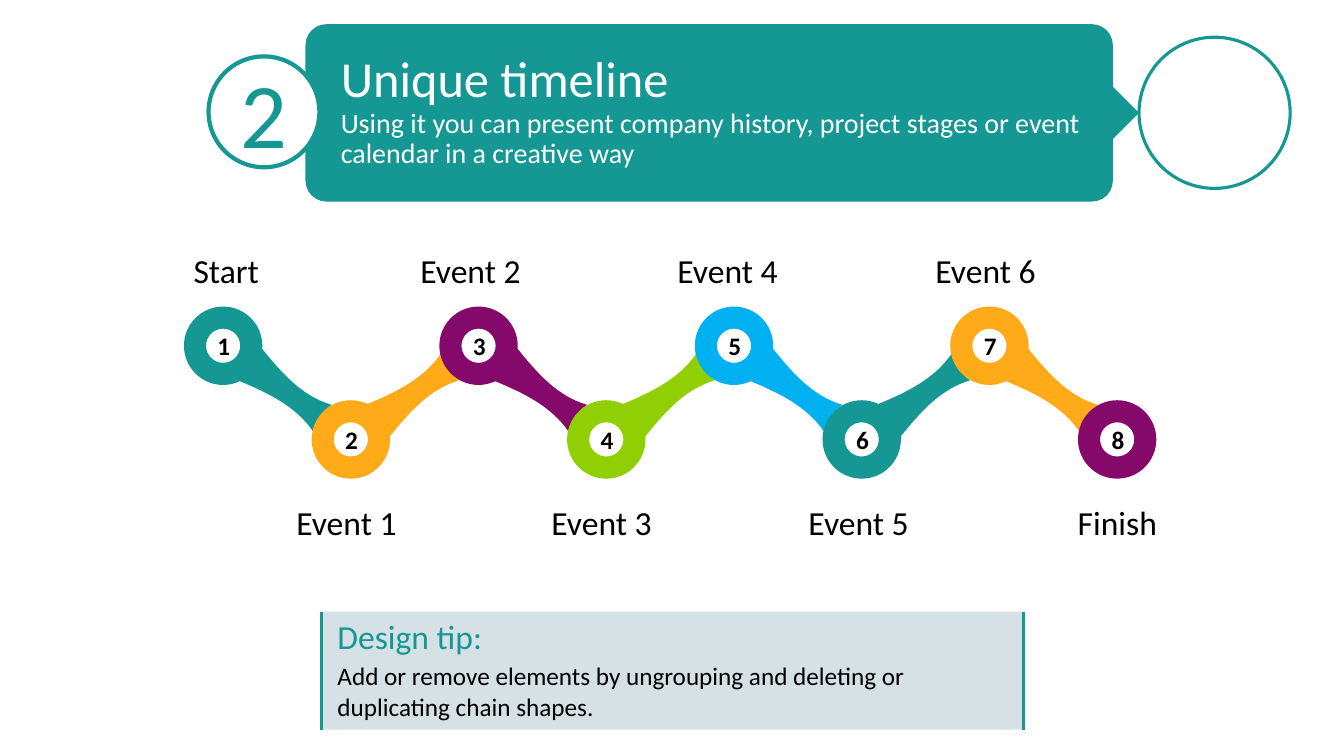
"""Build a slide with a chain-shaped timeline of eight numbered events."""
from dataclasses import dataclass
from itertools import pairwise
from math import cos, radians, sin, tan

from pptx import Presentation
from pptx.dml.color import RGBColor
from pptx.enum.shapes import MSO_SHAPE
from pptx.enum.text import MSO_ANCHOR, MSO_AUTO_SIZE, PP_ALIGN
from pptx.oxml.ns import qn
from pptx.util import Pt

ROUNDED = MSO_SHAPE.ROUNDED_RECTANGLE
TRIANGLE = MSO_SHAPE.RIGHT_TRIANGLE
OVAL = MSO_SHAPE.OVAL
BRACKETS = MSO_SHAPE.DOUBLE_BRACKET
TOP, MIDDLE = MSO_ANCHOR.TOP, MSO_ANCHOR.MIDDLE
LEFT, CENTER = PP_ALIGN.LEFT, PP_ALIGN.CENTER
NO_FIT, GROW = MSO_AUTO_SIZE.NONE, MSO_AUTO_SIZE.SHAPE_TO_FIT_TEXT


@dataclass(frozen=True)
class Theme:
    font: str = "Calibri"
    teal: RGBColor = RGBColor(0x15, 0x97, 0x94)
    orange: RGBColor = RGBColor(0xFF, 0xAA, 0x19)
    purple: RGBColor = RGBColor(0x85, 0x09, 0x6A)
    green: RGBColor = RGBColor(0x90, 0xCF, 0x03)
    blue: RGBColor = RGBColor(0x00, 0xB0, 0xF0)
    pale: RGBColor = RGBColor(0xD6, 0xE1, 0xE6)
    white: RGBColor = RGBColor(0xFF, 0xFF, 0xFF)
    black: RGBColor = RGBColor(0, 0, 0)
    section_size: int = 66
    title_size: int = 36
    subtitle_size: int = 20
    heading_size: int = 24
    text_size: int = 18


THEME = Theme()
EVENTS = [
    ("Start", 73.4, THEME.teal),
    ("Event 1 ", 162, THEME.orange),
    ("Event 2 ", 250.6, THEME.purple),
    ("Event 3 ", 344.2, THEME.green),
    ("Event 4 ", 434.2, THEME.blue),
    ("Event 5 ", 527.8, THEME.teal),
    ("Event 6 ", 618.5, THEME.orange),
    ("Finish", 709.9, THEME.purple),
]
FIRST_X, STEP = 159.4, 91.23
NODE_Y = (247, 313.9)
LABEL_Y = (175, 355)
RING_RADIUS, HOLE_RADIUS = 28, 12.2
FULL_TURN = (0, -90, -180, -270, -360)
LINKED_TURN = (4.5, 0, -90, -180, -270, -295.2)
LINK_CURVES = [
    (32.4, 33.8), (51.8, 43.2), (64.1, 61),
    (65.5, 54), (70.5, 46.8), (77.5, 42.2),
    (56.2, 36), (41.8, 19.4), (27.91, 2.2),
]


def add_run(paragraph, text, size, color, bold=False):
    """Append one formatted run to a paragraph."""
    run = paragraph.add_run()
    run.text = text
    run.font.name = THEME.font
    run.font.size = Pt(size)
    run.font.bold = bold
    run.font.color.rgb = color


def style_shape(shape, fill, line=None, width=0):
    """Give a shape a flat fill and an optional outline."""
    shape.shadow.inherit = False
    shape.fill.solid()
    shape.fill.fore_color.rgb = fill
    if line is None:
        shape.line.fill.background()
    else:
        shape.line.color.rgb = line
        shape.line.width = Pt(width)


def add_preset(slide, kind, box, fill, line=None, width=0):
    """Add a preset shape in a box given in points."""
    shape = slide.shapes.add_shape(kind, *map(Pt, box))
    style_shape(shape, fill, line, width)
    return shape


def add_text(slide, box, text, size, anchor=TOP, align=CENTER, number=False):
    """Add a one-line text box for a label or a node number."""
    shape = slide.shapes.add_textbox(*map(Pt, box))
    frame = shape.text_frame
    frame.word_wrap = not number
    frame.auto_size = GROW if number else NO_FIT
    frame.vertical_anchor = anchor
    paragraph = frame.paragraphs[0]
    paragraph.alignment = align
    add_run(paragraph, text, size, THEME.black, bold=number)


def arc_points(radius, angles):
    """Return a start point, then three curve points for each arc."""
    points = [(radius * cos(radians(angles[0])), radius * sin(radians(angles[0])))]
    for start, end in pairwise(map(radians, angles)):
        pull = 4 / 3 * tan((end - start) / 4)
        points += [
            (radius * (cos(start) - pull * sin(start)),
             radius * (sin(start) + pull * cos(start))),
            (radius * (cos(end) + pull * sin(end)),
             radius * (sin(end) - pull * cos(end))),
            (radius * cos(end), radius * sin(end)),
        ]
    return points


def curve_segments(shape):
    """Turn each three straight segments of a freeform into one curve."""
    for outline in shape.element.iter(qn("a:path")):
        segments = outline.findall(qn("a:lnTo"))
        for first in range(0, len(segments), 3):
            curve = outline.makeelement(qn("a:cubicBezTo"))
            segments[first].addprevious(curve)
            for segment in segments[first:first + 3]:
                curve.append(segment[0])
                outline.remove(segment)


def add_node(slide, x, y, color, direction, linked):
    """Add a ring whose link leads down (1) or up (-1) to the next one."""
    ring = arc_points(RING_RADIUS, LINKED_TURN if linked else FULL_TURN)
    if linked:
        ring += LINK_CURVES
    ring, hole = [
        [(Pt(x + dx), Pt(y + direction * dy)) for dx, dy in contour]
        for contour in (ring, arc_points(HOLE_RADIUS, FULL_TURN))
    ]
    builder = slide.shapes.build_freeform(*ring[0])
    builder.add_line_segments(ring[1:], close=True)
    builder.move_to(*hole[0])
    builder.add_line_segments(hole[1:], close=True)
    shape = builder.convert_to_shape()
    curve_segments(shape)
    style_shape(shape, color)


def add_timeline(slide):
    """Add the chain of nodes with numbers and labels."""
    for index, (label, left, color) in enumerate(EVENTS):
        row = index % 2
        x, y = FIRST_X + index * STEP, NODE_Y[row]
        add_node(slide, x, y, color, -1 if row else 1, index < len(EVENTS) - 1)
        add_text(slide, (x - 11.15, y - 14.4, 22.3, 28.8), str(index + 1),
                 THEME.text_size, align=LEFT, number=True)
        add_text(slide, (left, LABEL_Y[row], 176.4, 36), label,
                 THEME.heading_size, anchor=TOP if row else MIDDLE)


def add_header(slide):
    """Add the banner, its title and the circles at both ends."""
    banner = add_preset(slide, ROUNDED, (218.2, 17.3, 576.7, 126.7), THEME.teal)
    banner.adjustments[0] = 0.118
    pointer = add_preset(slide, TRIANGLE, (780.5, 67, 27.4, 27.4), THEME.teal)
    pointer.rotation = 225
    add_preset(slide, OVAL, (813.6, 26.6, 108, 108), THEME.white, THEME.teal, 2.25)

    title = slide.shapes.title
    title.element.getparent().append(title.element)
    title.left, title.top, title.width, title.height = map(Pt, (236.2, 18, 550, 123.8))
    frame = title.text_frame
    frame.auto_size = NO_FIT
    frame.vertical_anchor = MIDDLE
    paragraph = frame.paragraphs[0]
    paragraph.alignment = LEFT
    paragraph.line_spacing = 0.9
    add_run(paragraph, "Unique timeline", THEME.title_size, THEME.white)
    paragraph.add_line_break()
    add_run(paragraph, "Using it you can present company history, project stages "
            "or event calendar in a creative way", THEME.subtitle_size, THEME.white)

    badge = add_preset(slide, OVAL, (149, 40.3, 79.2, 79.2), THEME.white, THEME.teal, 3)
    badge.text_frame.vertical_anchor = MIDDLE
    paragraph = badge.text_frame.paragraphs[0]
    paragraph.alignment = CENTER
    add_run(paragraph, "2", THEME.section_size, THEME.teal)


def add_tip(slide):
    """Add the design tip between two side lines."""
    tip = add_preset(slide, BRACKETS, (229.7, 437, 501.1, 84.2),
                     THEME.pale, THEME.teal, 2.25)
    tip.adjustments[0] = 0
    frame = tip.text_frame
    frame.vertical_anchor = MIDDLE
    frame.margin_left = frame.margin_right = Pt(7.2)
    frame.margin_top, frame.margin_bottom = Pt(8.64), Pt(11.52)
    lines = [
        ("Design tip:", THEME.heading_size, THEME.teal),
        ("Add or remove elements by ungrouping and deleting or "
         "duplicating chain shapes.", THEME.text_size, THEME.black),
    ]
    for index, line in enumerate(lines):
        paragraph = frame.add_paragraph() if index else frame.paragraphs[0]
        paragraph.level = 1
        paragraph.alignment = LEFT
        paragraph.space_after = Pt(3)
        properties = paragraph._p.get_or_add_pPr()
        properties.set("marL", str(Pt(4.32)))
        properties.set("indent", "0")
        add_run(paragraph, *line)


def main():
    """Create the presentation and save it."""
    presentation = Presentation()
    presentation.slide_width, presentation.slide_height = Pt(960), Pt(540)
    slide = presentation.slides.add_slide(presentation.slide_layouts[5])
    add_header(slide)
    add_timeline(slide)
    add_tip(slide)
    presentation.save("out.pptx")


if __name__ == "__main__":
    main()
